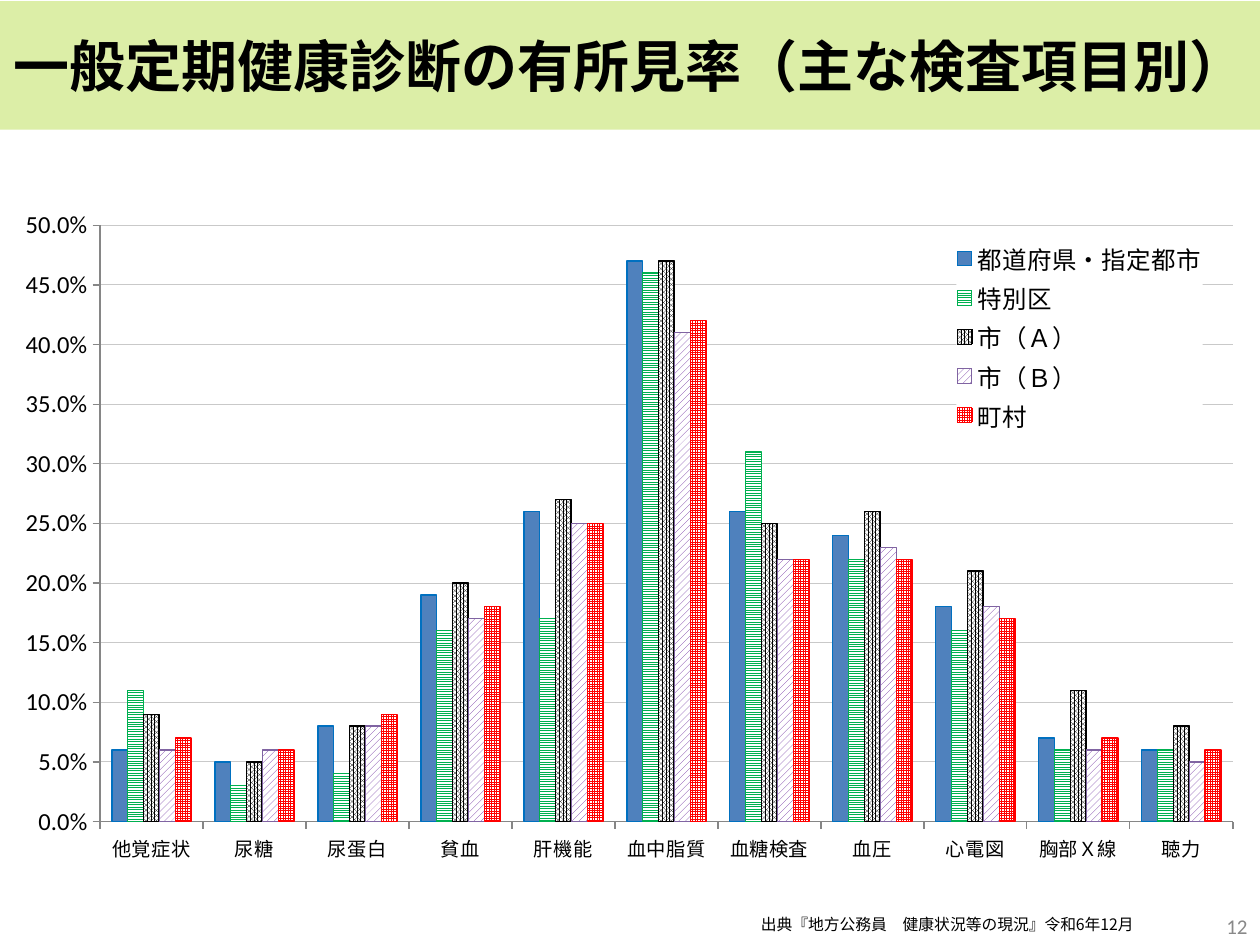
"""Build a slide charting health check finding rates by type of local government."""
from lxml.etree import SubElement
from pptx import Presentation
from pptx.chart.data import CategoryChartData
from pptx.dml.color import RGBColor
from pptx.enum.chart import XL_CHART_TYPE as ChartType, XL_LEGEND_POSITION as LegendPosition
from pptx.enum.chart import XL_TICK_MARK as Tick
from pptx.enum.dml import MSO_PATTERN as Pattern
from pptx.enum.text import MSO_ANCHOR as Anchor, PP_ALIGN as Align
from pptx.oxml import parse_xml
from pptx.oxml.ns import nsdecls, qn
from pptx.util import Inches, Pt

color = RGBColor.from_string


def place(part, index, x, y, w, h, inner=False):
    """Give a chart part a manual layout in shares of the chart."""
    for old in part.findall(qn("c:layout")):
        part.remove(old)
    layout = parse_xml(f"<c:layout {nsdecls('c')}/>")
    manual = SubElement(layout, qn("c:manualLayout"))
    settings = [("layoutTarget", "inner")] if inner else []
    settings += [("xMode", "edge"), ("yMode", "edge"), ("x", x), ("y", y), ("w", w), ("h", h)]
    for tag, value in settings:
        SubElement(manual, qn(f"c:{tag}")).set("val", str(value))
    part.insert(index, layout)


def write(frame, text, size, font, hex_color, align, anchor):
    """Put one formatted paragraph in a text frame."""
    frame.word_wrap = True
    frame.vertical_anchor = anchor
    paragraph = frame.paragraphs[0]
    paragraph.text = text
    paragraph.alignment = align
    paragraph.font.size = Pt(size)
    paragraph.font.name = font
    paragraph.font.color.rgb = color(hex_color)
    return paragraph


items = ["他覚症状", "尿糖", "尿蛋白", "貧血", "肝機能", "血中脂質", "血糖検査", "血圧",
         "心電図", "胸部Ｘ線", "聴力"]
governments = [
    ("都道府県・指定都市", None, "4F81BD", "0070C0",
     [0.06, 0.05, 0.08, 0.19, 0.26, 0.47, 0.26, 0.24, 0.18, 0.07, 0.06]),
    ("特別区", Pattern.LIGHT_HORIZONTAL, "00B050", "00B050",
     [0.11, 0.03, 0.04, 0.16, 0.17, 0.46, 0.31, 0.22, 0.16, 0.06, 0.06]),
    ("市（Ａ）", Pattern.PERCENT_80, "000000", "000000",
     [0.09, 0.05, 0.08, 0.2, 0.27, 0.47, 0.25, 0.26, 0.21, 0.11, 0.08]),
    ("市（Ｂ）", Pattern.WIDE_UPWARD_DIAGONAL, "7030A0", "8064A2",
     [0.06, 0.06, 0.08, 0.17, 0.25, 0.41, 0.22, 0.23, 0.18, 0.06, 0.05]),
    ("町村", Pattern.SMALL_GRID, "FF0000", "FF0000",
     [0.07, 0.06, 0.09, 0.18, 0.25, 0.42, 0.22, 0.22, 0.17, 0.07, 0.06]),
]

deck = Presentation()
deck.slide_width, deck.slide_height = Inches(10), Inches(7.5)
slide = deck.slides.add_slide(deck.slide_layouts[5])

heading = slide.shapes.title
heading.left, heading.top, heading.width, heading.height = map(Inches, (0, 0.01, 10, 1.02))
heading.fill.solid()
heading.fill.fore_color.rgb = color("DCEEA7")
heading.text_frame.margin_left = heading.text_frame.margin_right = Inches(0.05)
write(heading.text_frame, "一般定期健康診断の有所見率（主な検査項目別）", 32, "Arial", "000000",
      Align.CENTER, Anchor.MIDDLE).font.bold = True

rates = CategoryChartData(number_format="0.0%")
rates.categories = items
for name, _, _, _, shares in governments:
    rates.add_series(name, shares)
chart = slide.shapes.add_chart(ChartType.COLUMN_CLUSTERED, *map(Inches, (0.2, 1.62, 9.59, 5.27)),
                               rates).chart
chart.has_title = False
chart.font.size = Pt(18)
chart.font.name = "Calibri"
chart.font.color.rgb = color("000000")

columns = chart.plots[0]
columns.gap_width, columns.overlap = 150, 0
columns.vary_by_categories = False
for series, (_, pattern, fill_color, line_color, _) in zip(columns.series, governments):
    fill = series.format.fill
    if pattern is None:
        fill.solid()
    else:
        fill.patterned()
        fill.pattern = pattern
        fill.back_color.rgb = color("FFFFFF")
    fill.fore_color.rgb = color(fill_color)
    series.format.line.color.rgb = color(line_color)
    series.format.line.width = Pt(0.75)

for axis, size in ((chart.category_axis, 11), (chart.value_axis, 14)):
    axis.major_tick_mark = Tick.OUTSIDE
    axis.minor_tick_mark = Tick.NONE
    axis.tick_labels.font.size = Pt(size)
    axis.format.line.color.rgb = color("868686")
rate_axis = chart.value_axis
rate_axis.minimum_scale, rate_axis.maximum_scale, rate_axis.major_unit = 0, 0.5, 0.05
rate_axis.tick_labels.number_format = "0.0%"
rate_axis.tick_labels.number_format_is_linked = False
rate_axis.major_gridlines.format.line.color.rgb = color("C9C9C9")
rate_axis.major_gridlines.format.line.width = Pt(0.5)

chart.has_legend = True
legend = chart.legend
legend.position = LegendPosition.RIGHT
legend.include_in_layout = False
legend.font.size = Pt(14)
legend_part = chart._chartSpace.find(".//" + qn("c:legend"))
place(legend_part, 1, 0.771, 0.05, 0.204, 0.3)
legend_part.find(qn("c:overlay")).addnext(parse_xml(
    f'<c:spPr {nsdecls("c", "a")}><a:solidFill><a:srgbClr val="FFFFFF"/></a:solidFill></c:spPr>'))
place(chart._chartSpace.find(".//" + qn("c:plotArea")), 0, 0.064, 0.032, 0.938, 0.898, inner=True)

for box, text, size, font, hex_color, align, anchor in (
    ((7.67, 7.15, 2.33, 0.4), "12", 12, "Calibri", "898989", Align.RIGHT, Anchor.MIDDLE),
    ((5.94, 7.21, 3.37, 0.4), "出典『地方公務員　健康状況等の現況』令和6年12月", 9,
     "Noto Sans CJK JP", "000000", Align.LEFT, Anchor.TOP),
):
    note = slide.shapes.add_textbox(*map(Inches, box))
    write(note.text_frame, text, size, font, hex_color, align, anchor)

deck.save("out.pptx")
